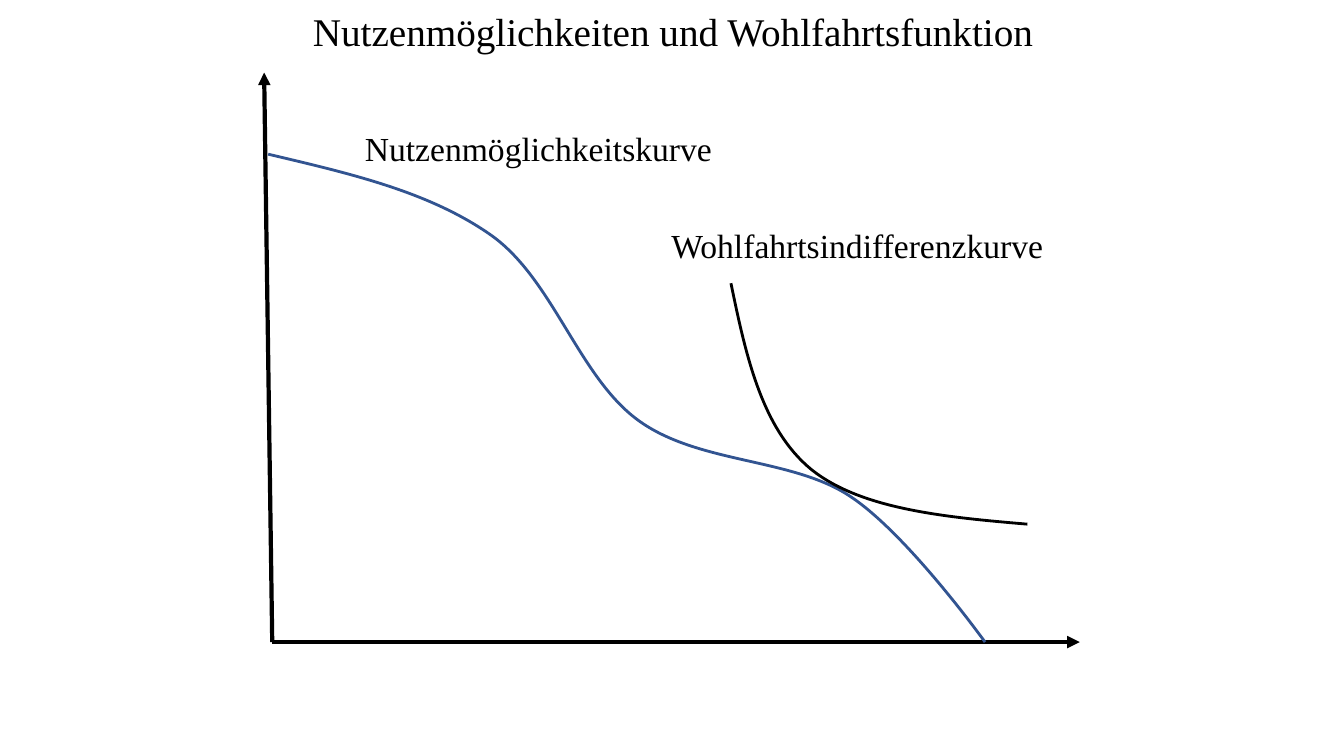
from lxml.etree import SubElement
from pptx import Presentation
from pptx.dml.color import RGBColor
from pptx.enum.shapes import MSO_CONNECTOR as Connector
from pptx.enum.text import MSO_ANCHOR as Anchor, MSO_AUTO_SIZE as Fit, PP_ALIGN as Align
from pptx.oxml.ns import qn
from pptx.util import Pt

BLACK = RGBColor(0x00, 0x00, 0x00)
BLUE = RGBColor(0x32, 0x54, 0x91)

ORIGIN = (270, 637)
AXIS_TIPS = [(262, 72), (1071, 637)]
UTILITY_CURVE = [
    (266, 153), (346, 172), (426, 190), (488, 234), (549, 278), (574, 374),
    (633, 417), (692, 460), (783, 454), (841, 491), (898, 527), (977, 637), (977, 637),
]
WELFARE_CURVE = [
    (725, 281), (740, 354), (756, 426), (805, 466), (854, 505), (936, 513), (1019, 520),
]
TITLE_FRAME = {"word_wrap": True, "vertical_anchor": Anchor.MIDDLE}
LABEL_FRAME = {"word_wrap": False, "auto_size": Fit.SHAPE_TO_FIT_TEXT}
LABELS = [
    ("Wohlfahrtsindifferenzkurve", (656, 218, 392, 50)),
    ("Nutzenmöglichkeitskurve", (352, 122, 367, 50)),
]


class Diagram:
    """Draws axes, curves and text on one page in a shared style."""

    scale = 9144
    font = "Times New Roman"

    def __init__(self, width, height):
        self.deck = Presentation()
        self.deck.slide_width, self.deck.slide_height = self.emu(width, height)
        self.page = self.deck.slides.add_slide(self.deck.slide_layouts[6])

    def emu(self, *lengths):
        return [length * self.scale for length in lengths]

    def apply(self, target, values):
        for name, value in values.items():
            setattr(target, name, value)

    def stroke(self, shape, color, points):
        shape.line.color.rgb = color
        shape.line.width = Pt(points)

    def text(self, words, place, size, frame, align=Align.LEFT):
        box = self.page.shapes.add_textbox(*self.emu(*place))
        self.apply(box.text_frame, frame)
        para = box.text_frame.paragraphs[0]
        para.alignment = align
        span = para.add_run()
        span.text = words
        self.apply(span.font, {"name": self.font, "size": Pt(size)})
        span.font.color.rgb = BLACK

    def axes(self, origin, tips, points=3):
        group = self.page.shapes.add_group_shape()
        for tip in tips:
            axis = group.shapes.add_connector(Connector.STRAIGHT, *self.emu(*origin, *tip))
            self.stroke(axis, BLACK, points)
            SubElement(axis.line._get_or_add_ln(), qn("a:tailEnd"), type="triangle")
            SubElement(axis._element.spPr, qn("a:effectLst"))

    def curve(self, knots, color, points=2):
        start, *rest = [self.emu(*knot) for knot in knots]
        builder = self.page.shapes.build_freeform(*start)
        builder.add_line_segments(rest, close=False)
        shape = builder.convert_to_shape()
        shape.shadow.inherit = False
        shape.fill.background()
        self.stroke(shape, color, points)
        segments = list(shape._element.iter(qn("a:lnTo")))
        for bend, *others in zip(segments[::3], segments[1::3], segments[2::3]):
            bend.tag = qn("a:cubicBezTo")
            for other in others:
                bend.append(other[0])
                other.getparent().remove(other)


def main():
    diagram = Diagram(1333, 750)
    diagram.text("Nutzenmöglichkeiten und Wohlfahrtsfunktion", (2, 1, 1331, 59), 28,
                 TITLE_FRAME, Align.CENTER)
    diagram.axes(ORIGIN, AXIS_TIPS)
    diagram.curve(UTILITY_CURVE, BLUE)
    diagram.curve(WELFARE_CURVE, BLACK)
    for words, place in LABELS:
        diagram.text(words, place, 24, LABEL_FRAME)
    diagram.deck.save("out.pptx")


if __name__ == "__main__":
    main()
